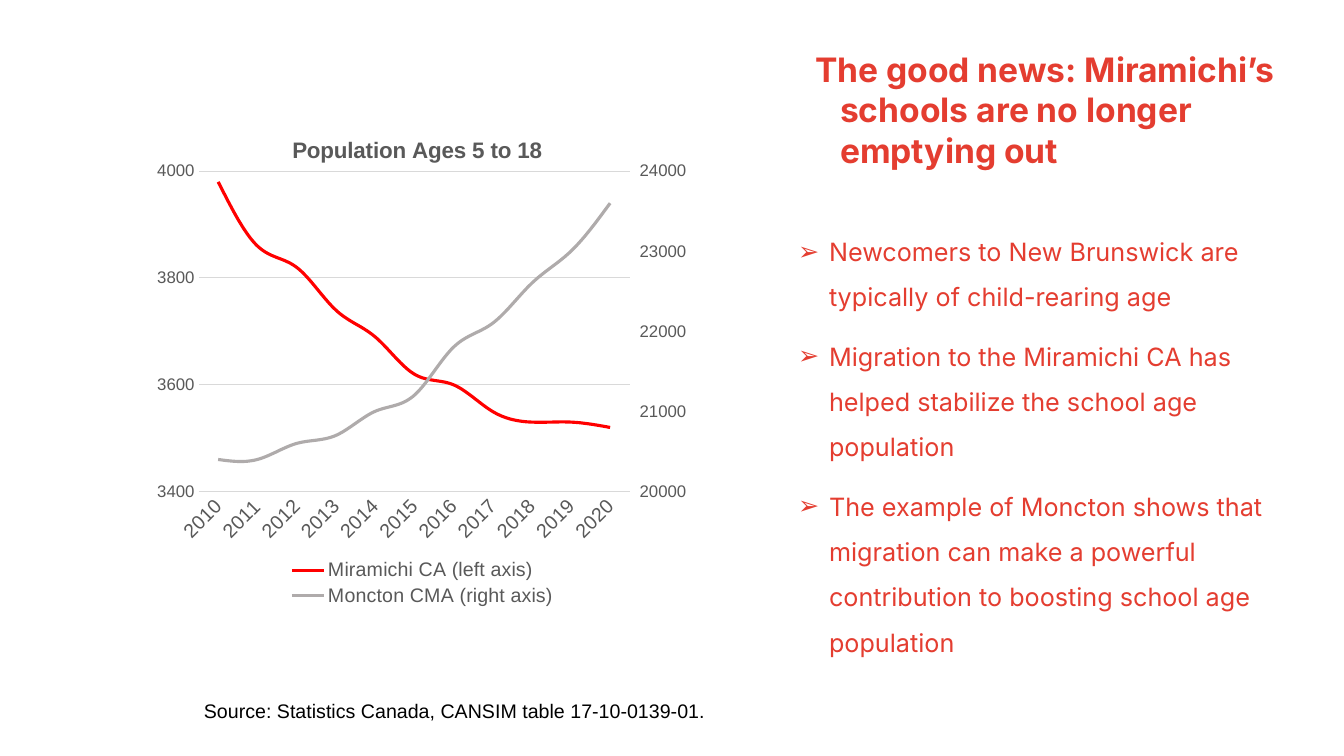
import copy
import pptx
import pptx.chart.data
import pptx.dml.color
import pptx.enum.chart
import pptx.enum.text
import pptx.oxml
import pptx.oxml.ns
import pptx.util

PX = 914400 / 100.8
RED, GREY, RULE = "E43D30", "595959", "D9D9D9"
YEARS = [str(year) for year in range(2010, 2021)]
LINES = [
    ("Miramichi CA (left axis)", "FF0000",
     [3980, 3860, 3820, 3740, 3690, 3620, 3600, 3550, 3530, 3530, 3520]),
    ("Moncton CMA (right axis)", "AFABAB",
     [20400, 20400, 20600, 20700, 21000, 21200, 21800, 22100, 22600, 23000, 23600]),
]
POINTS = [
    "Newcomers to New Brunswick are typically of child-rearing age",
    "Migration to the Miramichi CA has helped stabilize the school age population",
    "The example of Moncton shows that migration can make a powerful "
    "contribution to boosting school age population",
]
qn = pptx.oxml.ns.qn


def px(n):
    return round(n * PX)


def hue(code):
    return pptx.dml.color.RGBColor.from_string(code)


def style(font, size, color, name="Arial", bold=False):
    font.size = pptx.util.Pt(size)
    font.name = name
    font.bold = bold
    font.color.rgb = hue(color)


def add_run(para, text, *look, **more):
    run = para.add_run()
    run.text = text
    style(run.font, *look, **more)


def place(shape, left, top, width, height):
    shape.left, shape.top = px(left), px(top)
    shape.width, shape.height = px(width), px(height)
    frame = shape.text_frame
    frame.word_wrap = True
    frame.auto_size = pptx.enum.text.MSO_AUTO_SIZE.NONE
    frame.vertical_anchor = pptx.enum.text.MSO_ANCHOR.TOP
    return frame


def hang(para, left, first, before=0, lines=1.0):
    para.alignment = pptx.enum.text.PP_ALIGN.LEFT
    para.space_before = pptx.util.Pt(before)
    para.line_spacing = lines
    props = para._p.get_or_add_pPr()
    props.set("marL", str(px(left)))
    props.set("indent", str(px(first)))
    return props


def add_title(slide):
    frame = place(slide.shapes.title, 780, 44, 513, 97)
    para = frame.paragraphs[0]
    hang(para, 50, -25)
    add_run(para, "The good news: Miramichi’s schools are no longer emptying out",
            24, RED, "Inter", bold=True)


def add_list(slide):
    frame = place(slide.placeholders[1], 762, 216, 549, 463)
    space = pptx.oxml.ns.nsdecls("a")
    for i, text in enumerate(POINTS):
        para = frame.add_paragraph() if i else frame.paragraphs[0]
        props = hang(para, 57, -31, 10 if i else 0, 1.5)
        for mark in (f'<a:buClr {space}><a:srgbClr val="{RED}"/></a:buClr>',
                     f'<a:buFont {space} typeface="Arial"/>',
                     f'<a:buChar {space} char="➢"/>'):
            props.append(pptx.oxml.parse_xml(mark))
        add_run(para, text, 18, RED, "Inter")


def add_source(slide):
    frame = place(slide.shapes.add_textbox(0, 0, 1, 1), 194, 694, 944, 34)
    add_run(frame.paragraphs[0],
            "Source: Statistics Canada, CANSIM table 17-10-0139-01.", 14, "000000")


def lay_out(part, index, inner=False, **box):
    """Give a chart part a fixed place, as fractions of the chart."""
    for old in part.findall(qn("c:layout")):
        part.remove(old)
    tags = '<c:layoutTarget val="inner"/>' if inner else ""
    tags += "".join(f'<c:{side}Mode val="edge"/>' for side in "xy")
    tags += "".join(f'<c:{side} val="{n}"/>' for side, n in box.items())
    part.insert(index, pptx.oxml.parse_xml(
        f'<c:layout {pptx.oxml.ns.nsdecls("c")}>'
        f'<c:manualLayout>{tags}</c:manualLayout></c:layout>'))


def set_axes(chart):
    none = pptx.enum.chart.XL_TICK_MARK.NONE
    years, left = chart.category_axis, chart.value_axis
    for axis, size in ((years, 14), (left, 12)):
        axis.major_tick_mark = axis.minor_tick_mark = none
        style(axis.tick_labels.font, size, GREY)
    left.minimum_scale, left.maximum_scale, left.major_unit = 3400, 4000, 200
    left.has_major_gridlines = True
    left.format.line.fill.background()
    for line in (years.format.line, left.major_gridlines.format.line):
        line.color.rgb = hue(RULE)
        line.width = pptx.util.Pt(0.75)
    years._element.find(qn("c:txPr")).find(qn("a:bodyPr")).set("rot", "-2700000")


def split_axes(chart):
    """Move the last series to a second line plot with its own right axis."""
    area = chart._chartSpace.chart.plotArea
    plot = area.find(qn("c:lineChart"))
    twin = copy.deepcopy(plot)
    first, last = twin.findall(qn("c:ser"))
    twin.remove(first)
    plot.remove(plot.findall(qn("c:ser"))[1])
    plot.addnext(twin)

    years = copy.deepcopy(chart.category_axis._element)
    right = copy.deepcopy(chart.value_axis._element)
    ids = {}
    for node, new in zip(twin.findall(qn("c:axId")), ("5001", "5002")):
        ids[node.get("val")] = new
        node.set("val", new)
    for axis in (years, right):
        for tag in ("c:axId", "c:crossAx"):
            node = axis.find(qn(tag))
            node.set("val", ids[node.get("val")])
    years.find(qn("c:delete")).set("val", "1")
    right.remove(right.find(qn("c:majorGridlines")))
    scale = right.find(qn("c:scaling"))
    for parent, tag, value in (
            (scale, "c:min", "20000"), (scale, "c:max", "24000"),
            (right, "c:majorUnit", "1000"), (right, "c:axPos", "r"),
            (right, "c:majorTickMark", "out"), (right, "c:crosses", "max")):
        parent.find(qn(tag)).set("val", value)
    chart.value_axis._element.addnext(right)
    right.addnext(years)
    lay_out(area, 0, True, x=0.11, y=0.11, w=0.77, h=0.65)


def add_chart(slide):
    data = pptx.chart.data.CategoryChartData()
    data.categories = YEARS
    for name, color, values in LINES:
        data.add_series(name, values)
    chart = slide.shapes.add_chart(
        pptx.enum.chart.XL_CHART_TYPE.LINE,
        px(137), px(117), px(560), px(493), data).chart
    style(chart.font, 10, "000000")

    # Series
    chart.plots[0].vary_by_categories = False
    for series, (name, color, values) in zip(chart.plots[0].series, LINES):
        series.smooth = True
        series.format.line.color.rgb = hue(color)
        series.format.line.width = pptx.util.Pt(2.25)

    # Title and legend
    chart.has_title = True
    title = chart.chart_title
    add_run(title.text_frame.paragraphs[0], "Population Ages 5 to 18",
            16, GREY, bold=True)
    lay_out(title._element, 1, x=0.27, y=0.03)
    chart.has_legend = True
    legend = chart.legend
    legend.position = pptx.enum.chart.XL_LEGEND_POSITION.BOTTOM
    legend.include_in_layout = False
    style(legend.font, 14, GREY)
    lay_out(legend._element, 1, x=0.26, y=0.89, w=0.5, h=0.11)

    set_axes(chart)
    split_axes(chart)


def main():
    deck = pptx.Presentation()
    deck.slide_width, deck.slide_height = px(1344), px(756)
    slide = deck.slides.add_slide(deck.slide_layouts[1])
    add_title(slide)
    add_list(slide)
    add_source(slide)
    add_chart(slide)
    deck.save("out.pptx")


if __name__ == "__main__":
    main()
